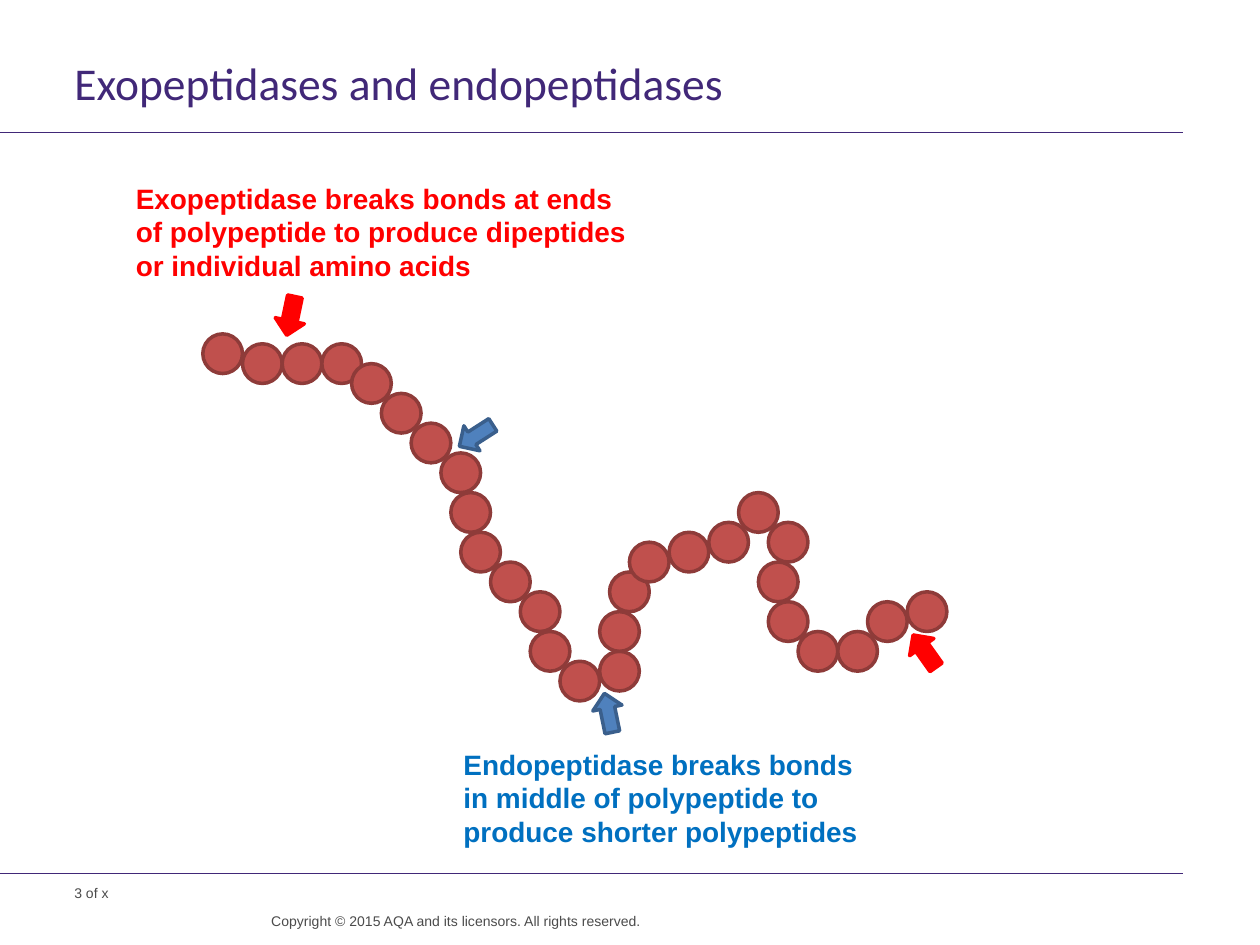
from dataclasses import dataclass, field

from lxml.etree import SubElement
from pptx import Presentation
from pptx.dml.color import RGBColor
from pptx.enum.shapes import MSO_CONNECTOR, MSO_SHAPE
from pptx.enum.text import MSO_ANCHOR, PP_ALIGN
from pptx.oxml.ns import qn
from pptx.util import Inches, Pt

COLORS = {
    "purple": "412878", "grey": "4B4B4B", "bead": "C0504D", "bead_edge": "8E3B39",
    "red": "FF0000", "blue": "4F81BD", "blue_edge": "3A5F8C", "blue_text": "0070C0",
}
STEP = 2 / 25.4  # 2 mm layout grid, in inches
BEAD = 4 * STEP
CHAIN_START = (1.61, 2.65)
# Grid steps from each amino acid to the next
CHAIN_STEPS = [
    (4, 1), (4, 0), (4, 0), (3, 2), (3, 3), (3, 3), (3, 3), (1, 4), (1, 4),
    (3, 3), (3, 3), (1, 4), (3, 3), (4, -1), (0, -4), (1, -4), (2, -3), (4, -1),
    (4, -1), (3, -3), (3, 3), (-1, 4), (1, 4), (3, 3), (4, 0), (3, -3), (4, -1),
]


@dataclass
class Arrow:
    left: float
    top: float
    rotation: float
    fill: str
    edge: str


@dataclass
class Label:
    box: tuple[float, float, float, float]
    text: str
    color: str
    size: int
    bold: bool = False
    inset: tuple[float, float] = (0, 0)
    para: dict = field(default_factory=dict)


ARROWS = [
    Arrow(3.66, 3.3, 57.3, "blue", "blue_edge"),
    Arrow(4.71, 5.5, 168.4, "blue", "blue_edge"),
    Arrow(2.19, 2.35, 11.9, "red", "red"),
    Arrow(7.22, 5.01, 144.6, "red", "red"),
]
LABELS = [
    Label((0.59, 7.02, 1.57, 0.13), "3 of x", "grey", 8),
    Label((1.93, 7.24, 3.16, 0.26),
          "Copyright © 2015 AQA and its licensors. All rights reserved.", "grey", 8,
          para={"alignment": PP_ALIGN.RIGHT, "line_spacing": Pt(10)}),
    Label((0.98, 1.39, 4.17, 0.91),
          "Exopeptidase breaks bonds at ends of polypeptide to produce dipeptides "
          "or individual amino acids", "red", 16, True, (0.1, 0.05)),
    Label((3.58, 5.88, 3.39, 0.91),
          "Endopeptidase breaks bonds in middle of polypeptide to produce shorter "
          "polypeptides", "blue_text", 16, True, (0.1, 0.05)),
]


def rgb(name: str) -> RGBColor:
    return RGBColor.from_string(COLORS[name])


def apply(target, values: dict) -> None:
    for name, value in values.items():
        setattr(target, name, value)


def write(tf, text: str, color: str, font: dict, para: dict, frame: dict) -> None:
    apply(tf, {"word_wrap": True, "vertical_anchor": MSO_ANCHOR.TOP, **frame})
    p = tf.paragraphs[0]
    apply(p, para)
    r = p.add_run()
    r.text = text
    apply(r.font, font)
    r.font.color.rgb = rgb(color)


def add_label(s, label: Label) -> None:
    tf = s.shapes.add_textbox(*map(Inches, label.box)).text_frame
    x, y = map(Inches, label.inset)
    write(tf, label.text, label.color,
          {"name": "Arial", "size": Pt(label.size), "bold": label.bold}, label.para,
          {"margin_left": x, "margin_right": x, "margin_top": y, "margin_bottom": y})


def add_shape(s, kind, left: float, top: float, width: float, height: float,
              fill: str, edge: str):
    sp = s.shapes.add_shape(kind, *map(Inches, (left, top, width, height)))
    sp.shadow.inherit = False
    sp.fill.solid()
    sp.fill.fore_color.rgb = rgb(fill)
    sp.line.color.rgb = rgb(edge)
    sp.line.width = Pt(2)
    return sp


def add_rule(s, y: float) -> None:
    line = s.shapes.add_connector(MSO_CONNECTOR.STRAIGHT, 0, Inches(y), Inches(9.39), Inches(y))
    line.line.color.rgb = rgb("purple")
    line.line.width = Pt(0.6)
    SubElement(line._element.spPr, qn("a:effectLst"))


def main() -> None:
    prs = Presentation()
    prs.slide_width, prs.slide_height = Inches(10), Inches(7.5)
    s = prs.slides.add_slide(prs.slide_layouts[5])

    # Title and rules
    title = s.shapes.title
    apply(title, {"left": Inches(0.59), "top": Inches(0.48),
                  "width": Inches(8.8), "height": Inches(0.47)})
    write(title.text_frame, "Exopeptidases and endopeptidases", "purple",
          {"name": "Calibri", "size": Pt(26)},
          {"alignment": PP_ALIGN.LEFT, "line_spacing": Pt(28)},
          {"margin_left": 0, "margin_right": Inches(0.1), "margin_top": 0, "margin_bottom": 0})
    for y in (1.05, 6.93):
        add_rule(s, y)

    # Polypeptide chain
    x, y = CHAIN_START
    for dx, dy in [(0, 0), *CHAIN_STEPS]:
        x, y = x + dx * STEP, y + dy * STEP
        add_shape(s, MSO_SHAPE.OVAL, x, y, BEAD, BEAD, "bead", "bead_edge")

    # Cutting points
    for a in ARROWS:
        sp = add_shape(s, MSO_SHAPE.DOWN_ARROW, a.left, a.top, 3 * STEP, BEAD, a.fill, a.edge)
        sp.rotation = a.rotation

    # Captions and footer
    for label in LABELS:
        add_label(s, label)

    prs.save("out.pptx")


if __name__ == "__main__":
    main()
